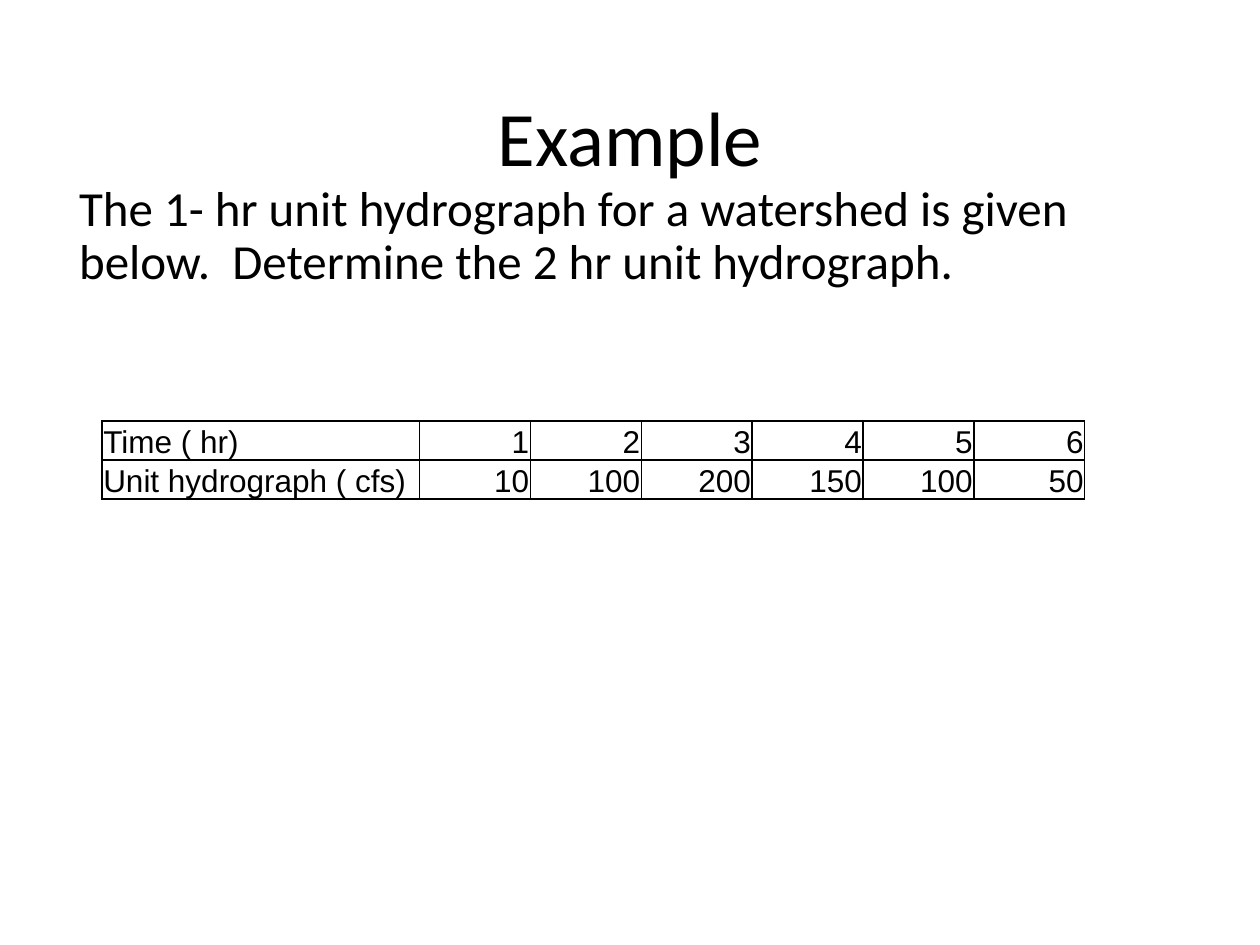
"""Build the unit hydrograph example slide."""
from lxml import etree
from pptx import Presentation
from pptx.dml.color import RGBColor
from pptx.enum import text
from pptx.util import Inches, Pt

INK = "000000"
LEFT, MID, RIGHT = text.PP_ALIGN.LEFT, text.PP_ALIGN.CENTER, text.PP_ALIGN.RIGHT
TOP, CORE, BASE = text.MSO_ANCHOR.TOP, text.MSO_ANCHOR.MIDDLE, text.MSO_ANCHOR.BOTTOM
NOTES = [
    ("Example", (0.69, 0.4, 8.62, 1.45), 44, MID, CORE, 0),
    ("The 1- hr unit hydrograph for a watershed is given below.  "
     "Determine the 2 hr unit hydrograph.", (0.53, 1.41, 9, 4.95), 28, LEFT, TOP, 10),
]
ROWS = [
    ("Time ( hr)", 1, 2, 3, 4, 5, 6),
    ("Unit hydrograph ( cfs)", 10, 100, 200, 150, 100, 50),
]
SPOT = (0.81, 3.34)
HEAD, STEP, HIGH = 2.52, 0.88, 0.29


def style(para, face, size, align):
    para.alignment = align
    for run in para.runs:
        run.font.name, run.font.size = face, Pt(size)
        run.font.color.rgb = RGBColor.from_string(INK)


def add_note(slide, words, spot, size, align, anchor, gap):
    frame = slide.shapes.add_textbox(*map(Inches, spot)).text_frame
    frame.word_wrap = True
    frame.vertical_anchor = anchor
    frame.text = words
    para = frame.paragraphs[0]
    para.line_spacing, para.space_before = 0.9, Pt(gap)
    style(para, "Calibri", size, align)


def add_edges(cell):
    ns = "http://schemas.openxmlformats.org/drawingml/2006/main"
    props = cell._tc.get_or_add_tcPr()
    for spot, side in enumerate(("lnL", "lnR", "lnT", "lnB")):
        line = etree.fromstring(
            f'<a:{side} xmlns:a="{ns}" w="{Pt(1)}"><a:solidFill>'
            f'<a:srgbClr val="{INK}"/></a:solidFill></a:{side}>')
        props.insert(spot, line)


def add_grid(slide):
    wide = [HEAD] + [STEP] * (len(ROWS[0]) - 1)
    size = (sum(wide), HIGH * len(ROWS))
    grid = slide.shapes.add_table(
        len(ROWS), len(wide), *map(Inches, SPOT + size)).table
    grid.first_row = grid.horz_banding = False
    for col, width in zip(grid.columns, wide):
        col.width = Inches(width)
    for r, row in enumerate(ROWS):
        for c, value in enumerate(row):
            cell = grid.cell(r, c)
            cell.text_frame.text = str(value)
            cell.margin_left = cell.margin_right = cell.margin_top = Inches(0.01)
            cell.margin_bottom = 0
            cell.vertical_anchor = BASE
            cell.fill.background()
            style(cell.text_frame.paragraphs[0], "Arial", 18, RIGHT if c else LEFT)
            add_edges(cell)


def main():
    deck = Presentation()
    deck.slide_width, deck.slide_height = Inches(10), Inches(7.5)
    slide = deck.slides.add_slide(deck.slide_layouts[6])
    for note in NOTES:
        add_note(slide, *note)
    add_grid(slide)
    deck.save("out.pptx")


if __name__ == "__main__":
    main()
